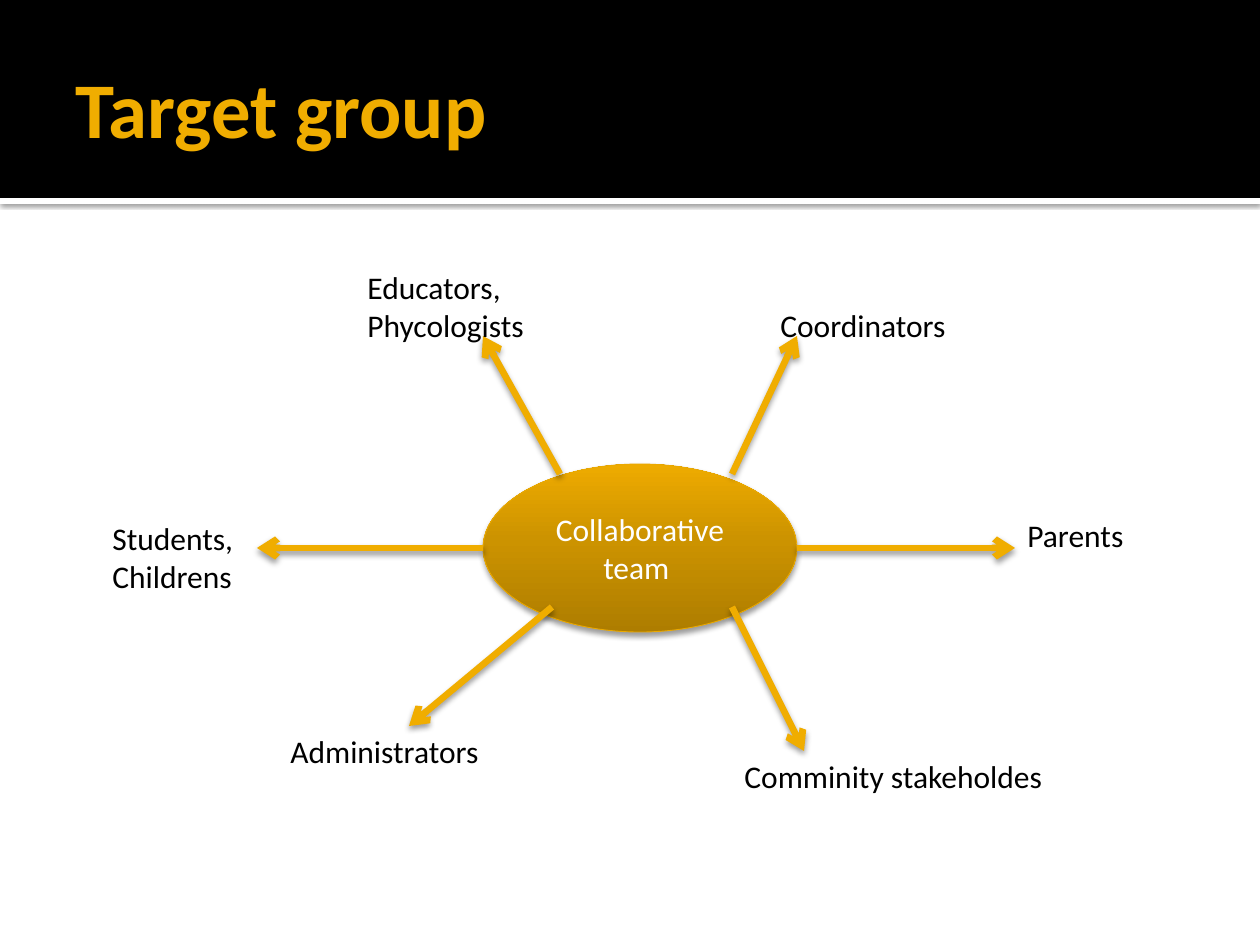
from dataclasses import dataclass

from lxml import etree
from pptx import Presentation
from pptx.dml.color import RGBColor
from pptx.enum.shapes import MSO_CONNECTOR, MSO_SHAPE
from pptx.enum.text import MSO_ANCHOR, PP_ALIGN
from pptx.oxml.ns import qn
from pptx.util import Emu, Pt

PX_PER_INCH = 126
TITLE_ONLY = 5
RECTANGLE, OVAL = MSO_SHAPE.RECTANGLE, MSO_SHAPE.OVAL
STRAIGHT = MSO_CONNECTOR.STRAIGHT
TOP, MIDDLE, BOTTOM = MSO_ANCHOR.TOP, MSO_ANCHOR.MIDDLE, MSO_ANCHOR.BOTTOM
LEFT, CENTER = PP_ALIGN.LEFT, PP_ALIGN.CENTER


@dataclass(frozen=True)
class Theme:
    font: str = "Calibri"
    title_size: int = 45
    body_size: int = 18
    black: str = "000000"
    white: str = "FFFFFF"
    accent: str = "F0AD00"
    outline: str = "EBA900"
    gradient: tuple = ((0, "AE7D00"), (55, "CC9300"), (100, "EEAB00"))
    # opacity in percent, then blur and distance in points
    rule_shadow: tuple = (60, 2.5, 0.8)
    hub_shadow: tuple = (38, 3.1, 2)
    arrow_shadow: tuple = (38, 3.5, 2)
    arrow_width: float = 3.78


def px(length):
    return Emu(round(length * 914400 / PX_PER_INCH))


def add_xml(parent, tag, **attributes):
    values = {name: str(value) for name, value in attributes.items()}
    return etree.SubElement(parent, qn(tag), values)


class SlideBuilder:
    def __init__(self, slide, theme):
        self.slide = slide
        self.theme = theme

    def set_text(self, shape, text, size, color, alignment=LEFT, anchor=TOP, bold=False):
        frame = shape.text_frame
        frame.word_wrap = True
        frame.vertical_anchor = anchor
        paragraph = frame.paragraphs[0]
        paragraph.text = text
        paragraph.alignment = alignment
        font = paragraph.font
        font.name, font.size, font.bold = self.theme.font, Pt(size), bold
        font.color.rgb = RGBColor.from_string(color)

    def shadow(self, shape, opacity, blur, distance):
        """Give the shape a soft shadow that falls straight down."""
        properties = shape._element.spPr
        effects = properties.find(qn("a:effectLst"))
        if effects is None:
            effects = add_xml(properties, "a:effectLst")
        outer = add_xml(effects, "a:outerShdw", blurRad=Pt(blur), dist=Pt(distance),
                        dir=90 * 60000, rotWithShape=0)
        color = add_xml(outer, "a:srgbClr", val=self.theme.black)
        add_xml(color, "a:alpha", val=opacity * 1000)

    def title(self, text, left, top, width, height):
        title = self.slide.shapes.title
        title.left, title.top = px(left), px(top)
        title.width, title.height = px(width), px(height)
        self.set_text(title, text, self.theme.title_size, self.theme.accent,
                      anchor=MIDDLE, bold=True)
        title._element.getparent().append(title._element)  # bring to front

    def band(self, top, height, color):
        band = self.slide.shapes.add_shape(
            RECTANGLE, 0, px(top), px(10 * PX_PER_INCH), px(height))
        band.fill.solid()
        band.fill.fore_color.rgb = RGBColor.from_string(color)
        band.line.fill.background()
        band.shadow.inherit = False
        return band

    def hub(self, text, left, top, width, height):
        hub = self.slide.shapes.add_shape(
            OVAL, px(left), px(top), px(width), px(height))
        hub.fill.gradient()
        hub.fill.gradient_angle = 90
        stops = hub._element.spPr.find(qn("a:gradFill")).find(qn("a:gsLst"))
        for stop in list(stops):
            stops.remove(stop)
        for position, color in self.theme.gradient:
            stop = add_xml(stops, "a:gs", pos=position * 1000)
            add_xml(stop, "a:srgbClr", val=color)
        hub.line.color.rgb = RGBColor.from_string(self.theme.outline)
        hub.line.width = Pt(0.5)
        hub.shadow.inherit = False
        self.shadow(hub, *self.theme.hub_shadow)
        self.set_text(hub, text, self.theme.body_size, self.theme.white, CENTER, MIDDLE)

    def arrow(self, start, end):
        arrow = self.slide.shapes.add_connector(
            STRAIGHT, *(px(value) for value in (*start, *end)))
        arrow.line.color.rgb = RGBColor.from_string(self.theme.accent)
        arrow.line.width = Pt(self.theme.arrow_width)
        outline = arrow._element.spPr.find(qn("a:ln"))
        add_xml(outline, "a:tailEnd", type="arrow")
        self.shadow(arrow, *self.theme.arrow_shadow)

    def label(self, text, left, top, width, height, anchor=TOP):
        label = self.slide.shapes.add_textbox(
            px(left), px(top), px(width), px(height))
        self.set_text(label, text, self.theme.body_size, self.theme.black, anchor=anchor)


def main():
    presentation = Presentation()
    presentation.slide_width = px(10 * PX_PER_INCH)
    presentation.slide_height = px(7.5 * PX_PER_INCH)
    slide = presentation.slides.add_slide(presentation.slide_layouts[TITLE_ONLY])
    theme = Theme()
    builder = SlideBuilder(slide, theme)

    rule = builder.band(198, 6, theme.white)
    builder.shadow(rule, *theme.rule_shadow)
    builder.band(0, 198, theme.black)
    builder.title("Target group", 63, 21, 1134, 173)

    builder.hub("Collaborative team ", 483, 464, 314, 168)
    arrows = (
        ((732, 474), (797, 336)),
        ((483, 548), (257, 548)),
        ((552, 607), (409, 726)),
        ((732, 607), (804, 751)),
        ((560, 474), (483, 336)),
        ((797, 548), (1015, 548)),
    )
    for start, end in arrows:
        builder.arrow(start, end)

    labels = (
        ("Educators, Phycologists", 355, 262, 260, 89),
        ("Coordinators", 768, 300, 229, 51),
        ("Parents", 1015, 510, 226, 51),
        ("Comminity stakeholdes", 732, 751, 399, 51),
        ("Administrators", 278, 726, 282, 51),
        ("Students, Childrens", 100, 474, 203, 127, BOTTOM),
    )
    for label in labels:
        builder.label(*label)

    presentation.save("out.pptx")


if __name__ == "__main__":
    main()
